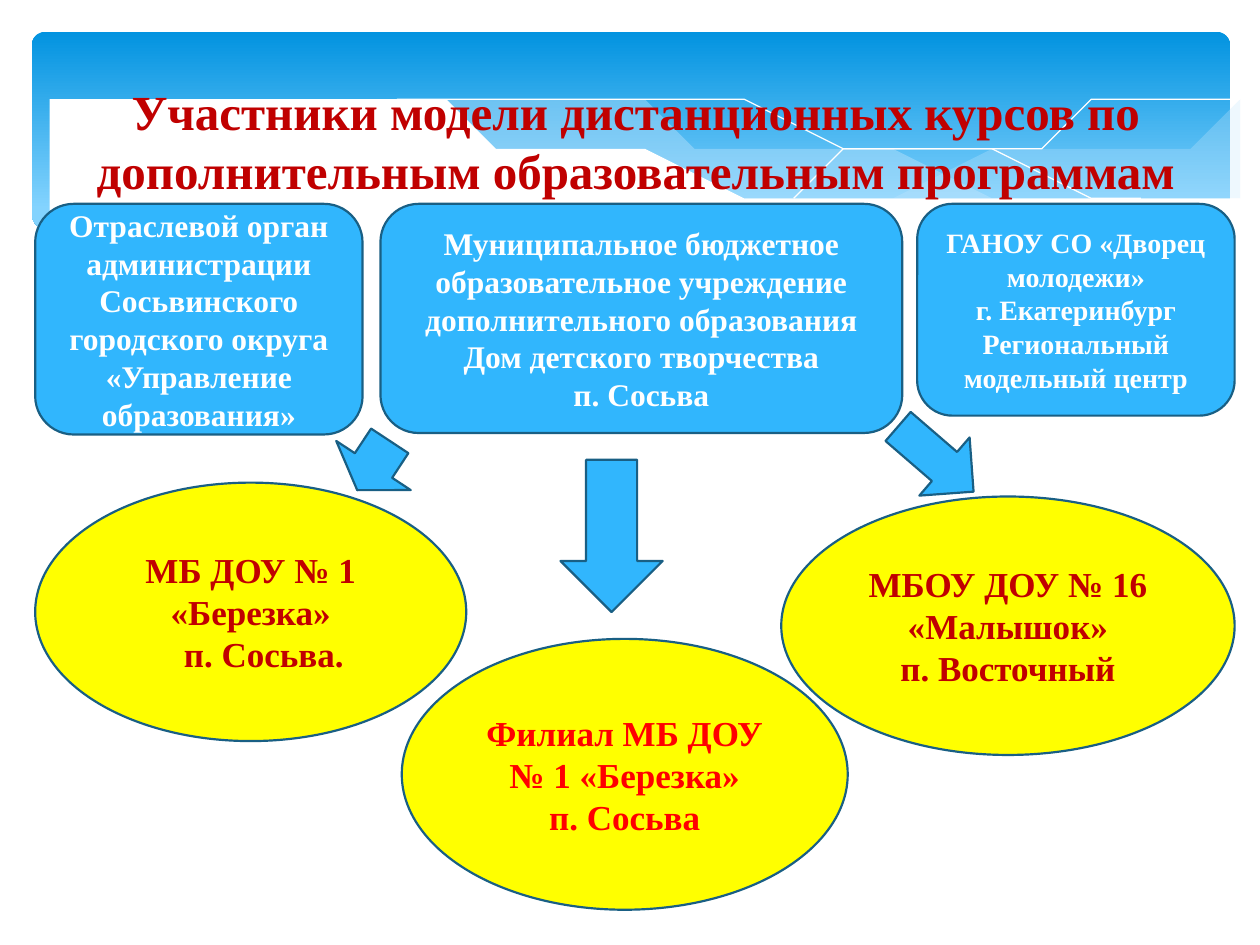
from typing import NamedTuple, Optional

from lxml.etree import SubElement
from pptx import Presentation
from pptx.dml.color import RGBColor
from pptx.enum.shapes import MSO_SHAPE
from pptx.enum.text import MSO_ANCHOR, PP_ALIGN
from pptx.oxml.ns import qn
from pptx.util import Cm, Pt

FONT = "Times New Roman"
RED, BRIGHT_RED, WHITE = "C00000", "FF0000", "FFFFFF"
BLUE, YELLOW, OUTLINE, PALE = "31B6FD", "FFFF00", "195F84", "C6E7FC"


class Participant(NamedTuple):
    """A labelled shape; its box is left, top, width and height in cm."""
    kind: MSO_SHAPE
    box: tuple
    fill: str
    lines: tuple
    size: int
    color: str
    last_indent: float = 0


class Arrow(NamedTuple):
    kind: MSO_SHAPE
    box: tuple
    rotation: float


class Wave(NamedTuple):
    """A filled area, or an open white hairline when fill is None."""
    points: tuple
    fill: Optional[str] = None
    alpha: int = 100


WAVES = (
    Wave(((24.79, 2.39), (24.08, 2.51), (23.01, 2.72), (21.87, 3), (19.79, 3.48),
          (17.93, 3.86), (16.79, 4.06), (17.91, 4.19), (18.92, 4.29), (20.12, 4.37),
          (21.21, 4.37), (22.15, 4.29), (22.99, 4.14), (23.75, 3.96), (24.79, 3.58)),
         PALE, 29),
    Wave(((22.68, 4.24), (21.26, 4.04), (19.69, 3.78), (17.93, 3.4), (15.98, 2.95),
          (14.45, 2.59), (13.06, 2.34), (11.81, 2.18), (10.67, 2.08), (9.65, 2.03),
          (8.74, 2.03), (7.95, 2.08), (7.26, 2.18), (8.2, 2.29), (9.19, 2.46),
          (10.26, 2.69), (11.4, 2.95), (13.46, 3.43), (15.27, 3.81), (16.89, 4.09),
          (18.34, 4.27), (19.63, 4.37), (20.78, 4.39), (21.77, 4.34)),
         PALE, 40),
    Wave(((7.85, 2.29), (8.33, 2.18), (9.22, 2.11), (10.57, 2.06), (11.91, 2.11),
          (12.95, 2.18), (14.12, 2.31), (15.44, 2.49), (16.89, 2.74), (18.47, 3.05),
          (20.19, 3.45), (22.07, 3.94), (23.04, 4.22))),
    Wave(((15.57, 3.84), (17.07, 3.43), (18.29, 3.15), (19.71, 2.82), (21.23, 2.51),
          (22.38, 2.31), (23.47, 2.13), (24.77, 2.03))),
    Wave(((24.82, 3.58), (24.13, 3.84), (23.37, 4.04), (22.53, 4.22), (21.59, 4.32),
          (20.55, 4.34), (19.33, 4.32), (17.98, 4.19), (16.46, 3.96), (14.71, 3.66),
          (12.78, 3.25), (11.35, 2.9), (9.93, 2.59), (8.64, 2.34), (7.42, 2.16),
          (6.35, 2.06), (5.36, 1.98), (4.5, 1.98), (3.71, 2.01), (2.69, 2.11),
          (1.93, 2.26), (1.17, 2.49), (0.58, 2.72), (0.58, 5.69), (24.82, 5.69)),
         WHITE),
)

KINDERGARTENS = (
    Participant(MSO_SHAPE.OVAL, (0.71, 9.73, 8.69, 5.21), YELLOW,
                ("МБ ДОУ № 1 «Березка»", "п. Сосьва."), 20, RED, last_indent=0.53),
    Participant(MSO_SHAPE.OVAL, (8.1, 12.88, 8.99, 5.46), YELLOW,
                ("Филиал МБ ДОУ № 1 «Березка»", "п. Сосьва"), 20, BRIGHT_RED),
    Participant(MSO_SHAPE.OVAL, (15.75, 10.01, 9.14, 5.21), YELLOW,
                ("МБОУ ДОУ № 16 «Малышок»", "п. Восточный"), 20, RED),
)

ORGANISERS = (
    Participant(MSO_SHAPE.ROUNDED_RECTANGLE, (7.67, 4.11, 10.52, 4.62), BLUE,
                ("Муниципальное бюджетное образовательное учреждение "
                 "дополнительного образования Дом детского творчества",
                 "п. Сосьва"), 18, WHITE),
    Participant(MSO_SHAPE.ROUNDED_RECTANGLE, (0.71, 4.11, 6.6, 4.65), BLUE,
                ("Отраслевой орган администрации Сосьвинского городского округа "
                 "«Управление образования»",), 18, WHITE),
    Participant(MSO_SHAPE.ROUNDED_RECTANGLE, (18.49, 4.11, 6.4, 4.27), BLUE,
                ("ГАНОУ СО «Дворец молодежи»", "г. Екатеринбург",
                 "Региональный модельный центр"), 16, WHITE),
)

ARROWS = (
    Arrow(MSO_SHAPE.DOWN_ARROW, (6.63, 8.79, 1.8, 1.19), 33.4),
    Arrow(MSO_SHAPE.RIGHT_ARROW, (17.86, 8.48, 2.01, 1.55), 40.8),
    Arrow(MSO_SHAPE.DOWN_ARROW, (11.3, 9.27, 2.06, 3.07), 0),
)


def paint(color_format, color: str) -> None:
    color_format.rgb = RGBColor.from_string(color)


def add_shape(s, kind: MSO_SHAPE, box: tuple, fill: str):
    sp = s.shapes.add_shape(kind, *map(Cm, box))
    sp.shadow.inherit = False
    sp.fill.solid()
    paint(sp.fill.fore_color, fill)
    paint(sp.line.color, OUTLINE)
    sp.line.width = Pt(1.25)
    return sp


def write(sp, lines: tuple, *, size: int, color: str,
          anchor: MSO_ANCHOR = MSO_ANCHOR.MIDDLE, last_indent: float = 0) -> None:
    tf = sp.text_frame
    tf.word_wrap = True
    tf.vertical_anchor = anchor
    for i, line in enumerate(lines):
        p = tf.add_paragraph() if i else tf.paragraphs[0]
        p.alignment = PP_ALIGN.CENTER
        r = p.add_run()
        r.text = line
        r.font.name = FONT
        r.font.size = Pt(size)
        r.font.bold = True
        paint(r.font.color, color)
    if last_indent:
        p._p.get_or_add_pPr().set("marL", str(Cm(last_indent)))


def add_participant(s, item: Participant) -> None:
    sp = add_shape(s, item.kind, item.box, item.fill)
    write(sp, item.lines, size=item.size, color=item.color,
          last_indent=item.last_indent)


def add_arrow(s, arrow: Arrow) -> None:
    add_shape(s, arrow.kind, arrow.box, BLUE).rotation = arrow.rotation


def add_banner(s) -> None:
    sp = add_shape(s, MSO_SHAPE.ROUNDED_RECTANGLE, (0.64, 0.64, 24.16, 3.96), BLUE)
    sp.adjustments[0] = 0.07
    sp.line.fill.background()
    sp.fill.gradient()
    sp.fill.gradient_angle = 270
    for stop, position, color in zip(sp.fill.gradient_stops, (0, 0.9),
                                     ("0293E0", "83D3FE")):
        stop.position = position
        paint(stop.color, color)


def add_wave(s, wave: Wave) -> None:
    start, *rest = wave.points
    builder = s.shapes.build_freeform(*start, scale=Cm(1))
    builder.add_line_segments(rest, close=wave.fill is not None)
    sp = builder.convert_to_shape()
    sp.shadow.inherit = False
    if wave.fill is None:
        sp.fill.background()
        paint(sp.line.color, WHITE)
        sp.line.width = Pt(0)
        return
    sp.line.fill.background()
    sp.fill.solid()
    paint(sp.fill.fore_color, wave.fill)
    if wave.alpha < 100:
        color = sp._element.spPr.find(qn("a:solidFill"))[0]
        SubElement(color, qn("a:alpha"), val=str(wave.alpha * 1000))


def main() -> None:
    prs = Presentation()
    prs.slide_width, prs.slide_height = Cm(25.4), Cm(19.05)
    s = prs.slides.add_slide(prs.slide_layouts[6])
    add_banner(s)
    for wave in WAVES:
        add_wave(s, wave)
    title = s.shapes.add_textbox(*map(Cm, (0.71, 1.52, 24.21, 3.43)))
    write(title, ("Участники модели дистанционных курсов по "
                  "дополнительным образовательным программам",),
          size=28, color=RED, anchor=MSO_ANCHOR.TOP)
    for item in KINDERGARTENS + ORGANISERS:
        add_participant(s, item)
    for arrow in ARROWS:
        add_arrow(s, arrow)
    prs.save("out.pptx")


if __name__ == "__main__":
    main()
